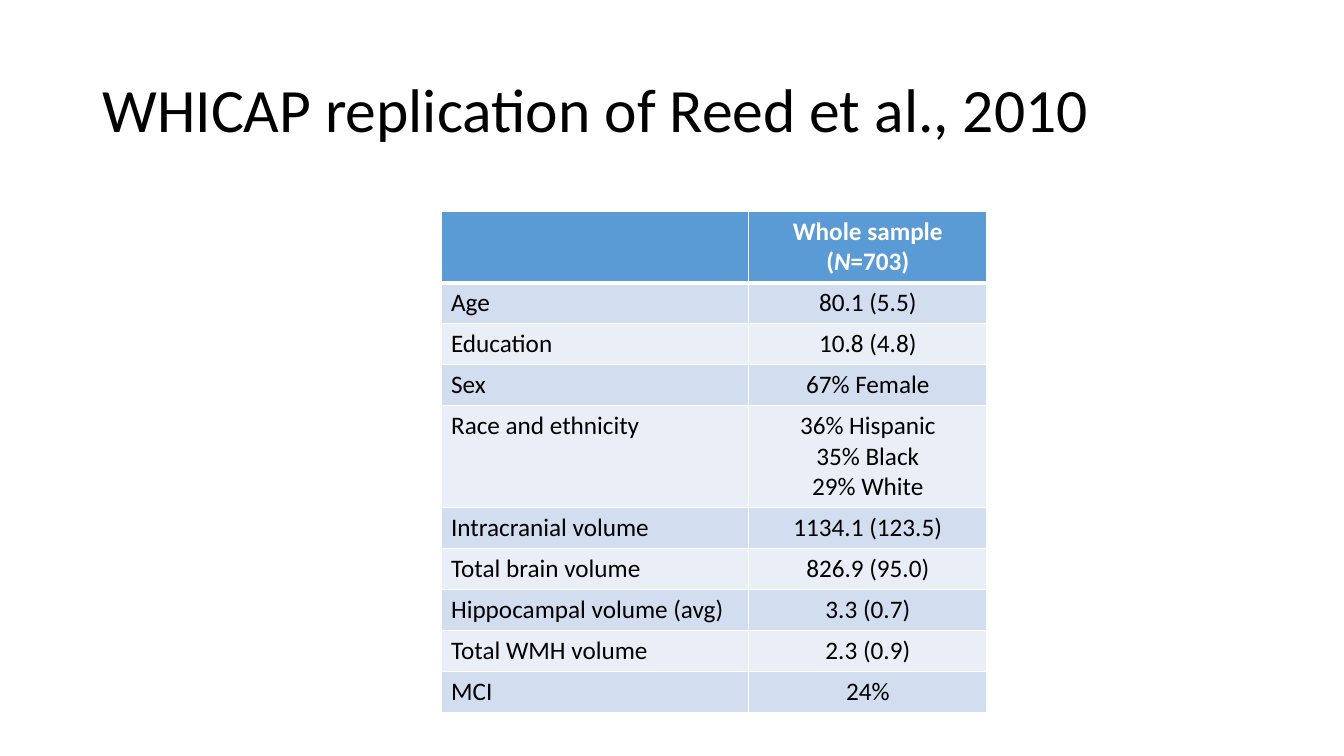
from lxml.etree import SubElement
from pptx import Presentation
from pptx.dml.color import RGBColor
from pptx.enum.text import MSO_ANCHOR as Anchor, PP_ALIGN as Align
from pptx.oxml.ns import qn
from pptx.util import Pt

EMU_PER_PX = 9525
FONT = "Calibri"
HEADER_FILL = "5B9BD5"
BAND_FILLS = ["D2DEEF", "EAEFF7"]
BORDER_COLOR = "FFFFFF"
COLUMN_WIDTHS = [293, 227]
ROW_HEIGHT = 39

HEADER = ["", [("Whole sample (", False), ("N", True), ("=703)", False)]]
SAMPLE_ROWS = [
    ("Age", "80.1 (5.5)"),
    ("Education", "10.8 (4.8)"),
    ("Sex", "67% Female"),
    ("Race and ethnicity", "36% Hispanic\n35% Black\n29% White"),
    ("Intracranial volume", "1134.1 (123.5)"),
    ("Total brain volume", "826.9 (95.0)"),
    ("Hippocampal volume (avg)", "3.3 (0.7)"),
    ("Total WMH volume", "2.3 (0.9)"),
    ("MCI", "24%"),
]


def px(length):
    return length * EMU_PER_PX


def rgb(color):
    return RGBColor.from_string(color)


def set_format(target, values):
    for name, value in values.items():
        setattr(target, name, value)


def add_run(paragraph, text, color, **font_values):
    run = paragraph.add_run()
    run.text = text
    set_format(run.font, {"name": FONT, **font_values})
    run.font.color.rgb = rgb(color)


def add_title(slide, text, left, top, width, height):
    title = slide.shapes.title
    set_format(title, {"left": px(left), "top": px(top),
                       "width": px(width), "height": px(height)})
    title.text_frame.vertical_anchor = Anchor.MIDDLE
    paragraph = title.text_frame.paragraphs[0]
    set_format(paragraph, {"alignment": Align.LEFT, "line_spacing": 0.9})
    add_run(paragraph, text, "000000", size=Pt(44))


def set_borders(cell, widths):
    """Draw the cell borders; widths are points by side: L, R, T, B."""
    properties = cell._tc.get_or_add_tcPr()
    for side, width in widths.items():
        line = SubElement(properties, qn(f"a:ln{side}"), w=str(Pt(width)))
        fill = SubElement(line, qn("a:solidFill"))
        SubElement(fill, qn("a:srgbClr"), val=BORDER_COLOR)


def fill_cell(cell, content, row, column):
    """Style one cell; content is text, or (text, italic) pairs on one line."""
    is_header = row == 0
    set_borders(cell, {"L": 1, "R": 1, "T": 3 if row == 1 else 1,
                       "B": 3 if is_header else 1})
    cell.fill.solid()
    cell.fill.fore_color.rgb = rgb(HEADER_FILL if is_header else BAND_FILLS[(row - 1) % 2])
    if isinstance(content, str):
        lines = [[(line, False)] for line in content.split("\n")]
    else:
        lines = [content]
    frame = cell.text_frame
    for index, line in enumerate(lines):
        paragraph = frame.add_paragraph() if index else frame.paragraphs[0]
        paragraph.alignment = Align.CENTER if column else Align.LEFT
        paragraph.font.size = Pt(18)
        for text, italic in line:
            if text:
                add_run(paragraph, text, "FFFFFF" if is_header else "000000",
                        size=Pt(18), bold=is_header, italic=italic)


def add_sample_table(slide, left, top):
    rows = [HEADER, *SAMPLE_ROWS]
    table = slide.shapes.add_table(
        len(rows), len(COLUMN_WIDTHS), px(left), px(top),
        px(sum(COLUMN_WIDTHS)), px(ROW_HEIGHT * len(rows))).table
    for column, width in zip(table.columns, COLUMN_WIDTHS):
        column.width = px(width)
    for row, contents in enumerate(rows):
        for column, content in enumerate(contents):
            fill_cell(table.cell(row, column), content, row, column)


def main():
    presentation = Presentation()
    set_format(presentation, {"slide_width": px(1280), "slide_height": px(720)})
    title_only = presentation.slide_layouts.get_by_name("Title Only")
    slide = presentation.slides.add_slide(title_only)
    add_title(slide, "WHICAP replication of Reed et al., 2010", 88, 38, 1104, 139)
    add_sample_table(slide, 420, 201)
    presentation.save("out.pptx")


if __name__ == "__main__":
    main()
